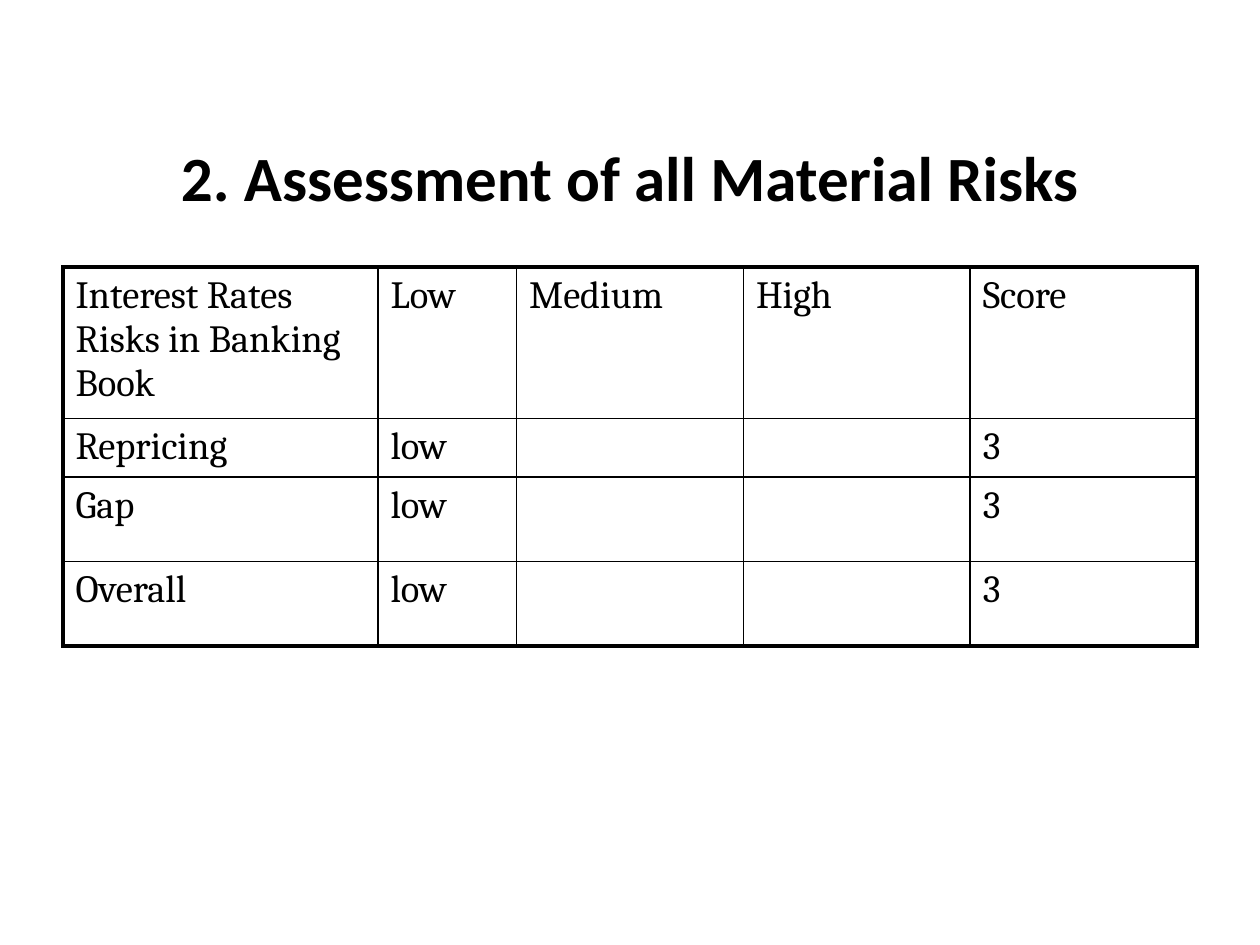
from lxml import etree
from pptx import Presentation
from pptx import util as u
from pptx.dml.color import RGBColor
from pptx.enum import text
from pptx.oxml.ns import qn

COLORS = {"ink": "000000", "paper": "FFFFFF"}
THIN, THICK = 1, 2.25
RISK_ROWS = [
    ["Interest Rates Risks in Banking Book", "Low", "Medium", "High", "Score"],
    ["Repricing", "low", "", "", "3"],
    ["Gap", "low", "", "", "3"],
    ["Overall", "low", "", "", "3"],
]
COLUMN_WIDTHS = [2.5, 1.1, 1.8, 1.8, 1.8]
ROW_HEIGHTS = [1.16, 0.46, 0.67, 0.67]


class RiskSlide:
    """Holds the style and the slide that is being filled."""

    def __init__(self, slide):
        self.slide = slide
        self.heading_font, self.heading_size = "Calibri", 36
        self.table_font, self.table_size = "Cambria", 22

    def style(self, paragraph, font, size, bold=False):
        for run in paragraph.runs:
            run.font.name = font
            run.font.size = u.Pt(size)
            run.font.bold = bold
            run.font.color.rgb = RGBColor.from_string(COLORS["ink"])

    def heading(self, wording, left, top, width, height):
        box = self.slide.shapes.add_textbox(
            u.Inches(left), u.Inches(top), u.Inches(width), u.Inches(height))
        frame = box.text_frame
        frame.word_wrap = True
        frame.vertical_anchor = text.MSO_ANCHOR.MIDDLE
        frame.text = wording
        frame.paragraphs[0].alignment = text.PP_ALIGN.CENTER
        self.style(frame.paragraphs[0], self.heading_font, self.heading_size, bold=True)

    def border(self, cell, side, points):
        properties = cell._tc.get_or_add_tcPr()
        line = etree.SubElement(properties, qn(f"a:ln{side}"), w=str(u.Pt(points)))
        fill = etree.SubElement(line, qn("a:solidFill"))
        etree.SubElement(fill, qn("a:srgbClr"), val=COLORS["ink"])

    def table(self, rows, widths, heights, left, top):
        grid = self.slide.shapes.add_table(
            len(rows), len(widths), u.Inches(left), u.Inches(top),
            u.Inches(sum(widths)), u.Inches(sum(heights))).table
        grid.first_row = grid.horz_banding = False
        for column, width in zip(grid.columns, widths):
            column.width = u.Inches(width)
        for row, height in zip(grid.rows, heights):
            row.height = u.Inches(height)
        last_row, last_column = len(rows) - 1, len(widths) - 1
        for r, entries in enumerate(rows):
            for c, entry in enumerate(entries):
                cell = grid.cell(r, c)
                outer = {"L": c == 0, "R": c == last_column,
                         "T": r == 0, "B": r == last_row}
                for side, is_outer in outer.items():
                    self.border(cell, side, THICK if is_outer else THIN)
                cell.fill.background()
                if entry:
                    cell.text_frame.text = entry
                    self.style(cell.text_frame.paragraphs[0],
                               self.table_font, self.table_size)


def main():
    deck = Presentation()
    deck.slide_width, deck.slide_height = u.Inches(10), u.Inches(7.5)
    slide = deck.slides.add_slide(deck.slide_layouts[6])
    slide.background.fill.solid()
    slide.background.fill.fore_color.rgb = RGBColor.from_string(COLORS["paper"])
    risks = RiskSlide(slide)
    risks.heading("2. Assessment of all Material Risks", 0.5, 0.77, 9, 1.25)
    risks.table(RISK_ROWS, COLUMN_WIDTHS, ROW_HEIGHTS, 0.5, 2.12)
    deck.save("out.pptx")


if __name__ == "__main__":
    main()
